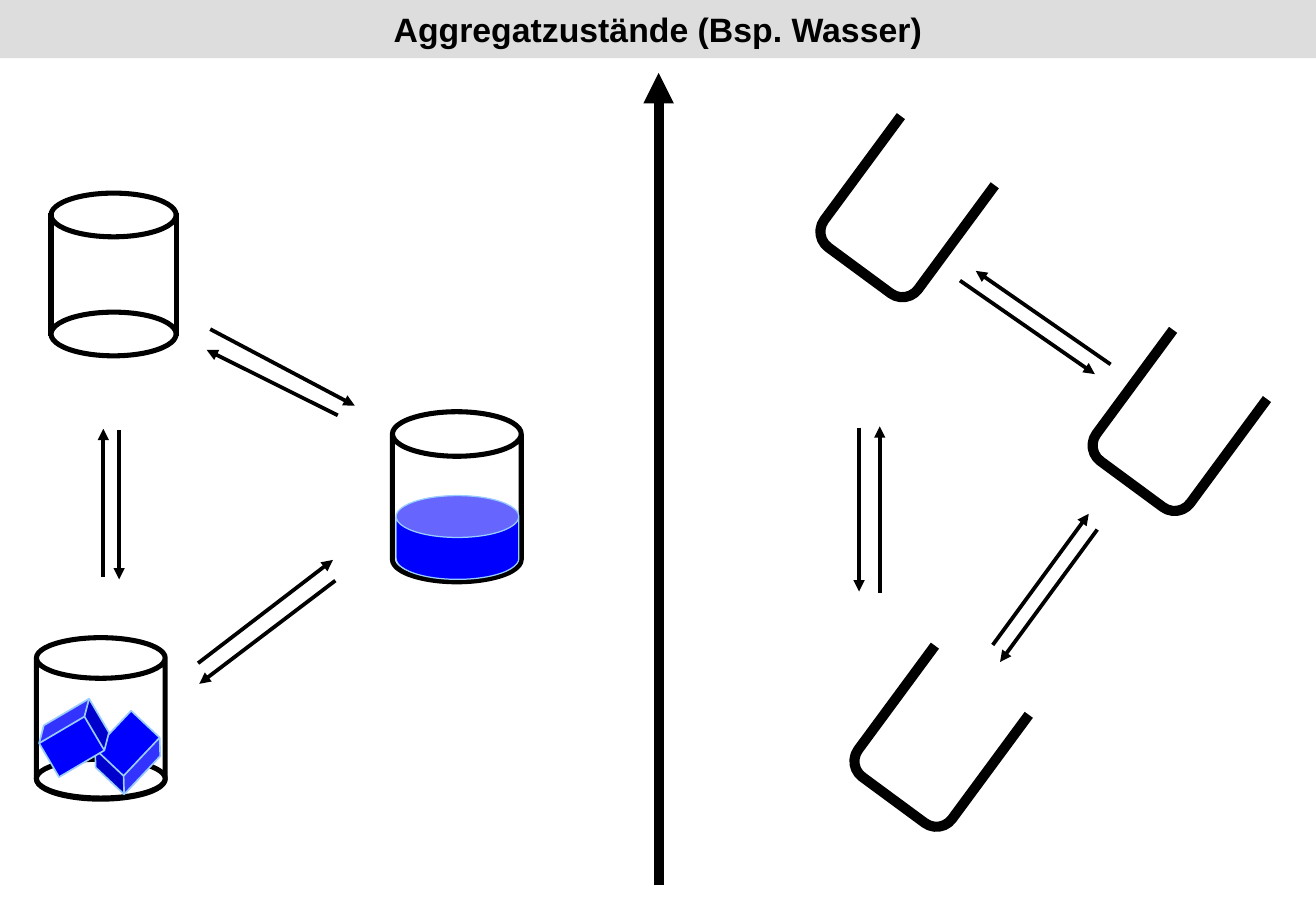
from lxml import etree
from pptx import Presentation
from pptx.dml.color import RGBColor
from pptx.enum.shapes import MSO_CONNECTOR, MSO_SHAPE
from pptx.enum.text import MSO_ANCHOR, PP_ALIGN
from pptx.oxml.ns import qn
from pptx.util import Inches, Pt

STRAIGHT = MSO_CONNECTOR.STRAIGHT
RECT = MSO_SHAPE.RECTANGLE
ROUND_RECT = MSO_SHAPE.ROUNDED_RECTANGLE
CAN = MSO_SHAPE.CAN
CUBE = MSO_SHAPE.CUBE
ELLIPSE = MSO_SHAPE.OVAL
MIDDLE = MSO_ANCHOR.MIDDLE
CENTER = PP_ALIGN.CENTER

THEME = {
    "band": "DDDDDD", "ink": "000000", "paper": "FFFFFF",
    "water": "0000FF", "water_edge": "99CCFF",
    "font": "Arial", "title_size": 20,
    "thin": 0.75, "ice_edge": 1, "arrow": 2.25, "glass": 3, "heavy": 6,
}

SLIDE_SIZE = (10.83, 7.5)
TITLE = "Aggregatzustände (Bsp. Wasser)"
TITLE_BOX = (0, 0, 10.83, 0.48)

CUP_CORNERS = [(7.31, 5.26), (9.27, 2.66), (7.03, 0.9)]
CUP_SIZE = (0.96, 1.47)
MOUTH_OFFSET = (0.24, -0.02)
MOUTH_SIZE = (1.29, 0.39)
CUP_TILT = 36.4

CUP_ARROWS = [
    (9.14, 3, 8.03, 2.23), (7.9, 2.31, 9.01, 3.08),
    (8.17, 5.31, 8.96, 4.23), (9.03, 4.36, 8.23, 5.45),
    (7.24, 4.88, 7.24, 3.51), (7.07, 3.52, 7.07, 4.87),
]
BEAKER_ARROWS = [
    (1.63, 5.46, 2.74, 4.61), (2.76, 4.78, 1.64, 5.63),
    (1.73, 2.71, 2.92, 3.34), (2.78, 3.42, 1.7, 2.88),
    (0.85, 4.75, 0.85, 3.53), (0.98, 3.54, 0.98, 4.77),
]
AXIS = (5.42, 7.29, 5.42, 0.6)

GLASS = {"fill": "paper", "edge": "ink", "weight": "glass"}
WATER = {"fill": "water", "edge": "water_edge", "weight": "thin"}
ICE = {"fill": "water", "edge": "water_edge", "weight": "ice_edge"}
CUP = {"fill": "paper", "edge": "ink", "weight": "heavy"}
MOUTH = {"fill": "paper", "edge": "paper", "weight": "thin"}
RIM = {"fill": None, "edge": "ink", "weight": "glass"}

LIQUID_AND_ICE = [
    (CAN, (3.23, 3.39, 1.06, 1.4), GLASS, 0.346, 0),
    (CAN, (3.26, 4.08, 1.01, 0.69), WATER, 0.5, 0),
    (CAN, (0.3, 5.25, 1.06, 1.33), GLASS, 0.316, 0),
    (ELLIPSE, (0.3, 6.25, 1.06, 0.32), GLASS, None, 0),
    (CUBE, (0.78, 5.98, 0.54, 0.43), ICE, 0.25, 133.3),
    (CUBE, (0.34, 5.86, 0.54, 0.43), ICE, 0.25, 329.5),
]

VAPOUR_LEFT, VAPOUR_WIDTH, RING_HEIGHT = 0.42, 1.03, 0.36
RIM_TOP, BASE_TOP = 1.59, 2.57
WALL_TOP, WALL_BOTTOM = 1.75, 2.77


def color(name):
    return RGBColor.from_string(THEME[name])


def add_part(slide, kind, box, look, bend=None, tilt=0):
    part = slide.shapes.add_shape(kind, *map(Inches, box))
    part.shadow.inherit = False
    part.rotation = tilt
    if bend is not None:
        part.adjustments[0] = bend
    if look["fill"]:
        part.fill.solid()
        part.fill.fore_color.rgb = color(look["fill"])
    else:
        part.fill.background()
    part.line.color.rgb = color(look["edge"])
    part.line.width = Pt(THEME[look["weight"]])


def add_stroke(slide, ends, weight, arrow=True):
    stroke = slide.shapes.add_connector(STRAIGHT, *map(Inches, ends))
    stroke.line.color.rgb = color("ink")
    stroke.line.width = Pt(THEME[weight])
    if arrow:
        outline = stroke.line._get_or_add_ln()
        etree.SubElement(outline, qn("a:tailEnd"), type="triangle")
    etree.SubElement(stroke._element.spPr, qn("a:effectLst"))


def add_title(slide):
    title = slide.shapes.title
    title.left, title.top, title.width, title.height = map(Inches, TITLE_BOX)
    title.fill.solid()
    title.fill.fore_color.rgb = color("band")
    title.text_frame.text = TITLE
    title.text_frame.vertical_anchor = MIDDLE
    heading = title.text_frame.paragraphs[0]
    heading.alignment = CENTER
    font = heading.runs[0].font
    font_format = {"name": THEME["font"], "size": Pt(THEME["title_size"]), "bold": True}
    for attribute, value in font_format.items():
        setattr(font, attribute, value)
    font.color.rgb = color("ink")


def add_cups(slide):
    for left, top in CUP_CORNERS:
        add_part(slide, ROUND_RECT, (left, top, *CUP_SIZE), CUP, 0.167, CUP_TILT)
        mouth_corner = (left + MOUTH_OFFSET[0], top + MOUTH_OFFSET[1])
        add_part(slide, RECT, (*mouth_corner, *MOUTH_SIZE), MOUTH, tilt=CUP_TILT)


def add_vapour_beaker(slide):
    ring_size = (VAPOUR_WIDTH, RING_HEIGHT)
    add_part(slide, ELLIPSE, (VAPOUR_LEFT, RIM_TOP, *ring_size), RIM)
    for wall in (VAPOUR_LEFT, VAPOUR_LEFT + VAPOUR_WIDTH):
        add_stroke(slide, (wall, WALL_TOP, wall, WALL_BOTTOM), "glass", arrow=False)
    add_part(slide, ELLIPSE, (VAPOUR_LEFT, BASE_TOP, *ring_size), GLASS)


def main():
    deck = Presentation()
    deck.slide_width, deck.slide_height = map(Inches, SLIDE_SIZE)
    slide = deck.slides.add_slide(deck.slide_layouts[5])
    add_title(slide)
    add_cups(slide)
    for beaker_part in LIQUID_AND_ICE:
        add_part(slide, *beaker_part)
    for ends in CUP_ARROWS + BEAKER_ARROWS:
        add_stroke(slide, ends, "arrow")
    add_vapour_beaker(slide)
    add_stroke(slide, AXIS, "heavy")
    deck.save("out.pptx")


if __name__ == "__main__":
    main()
